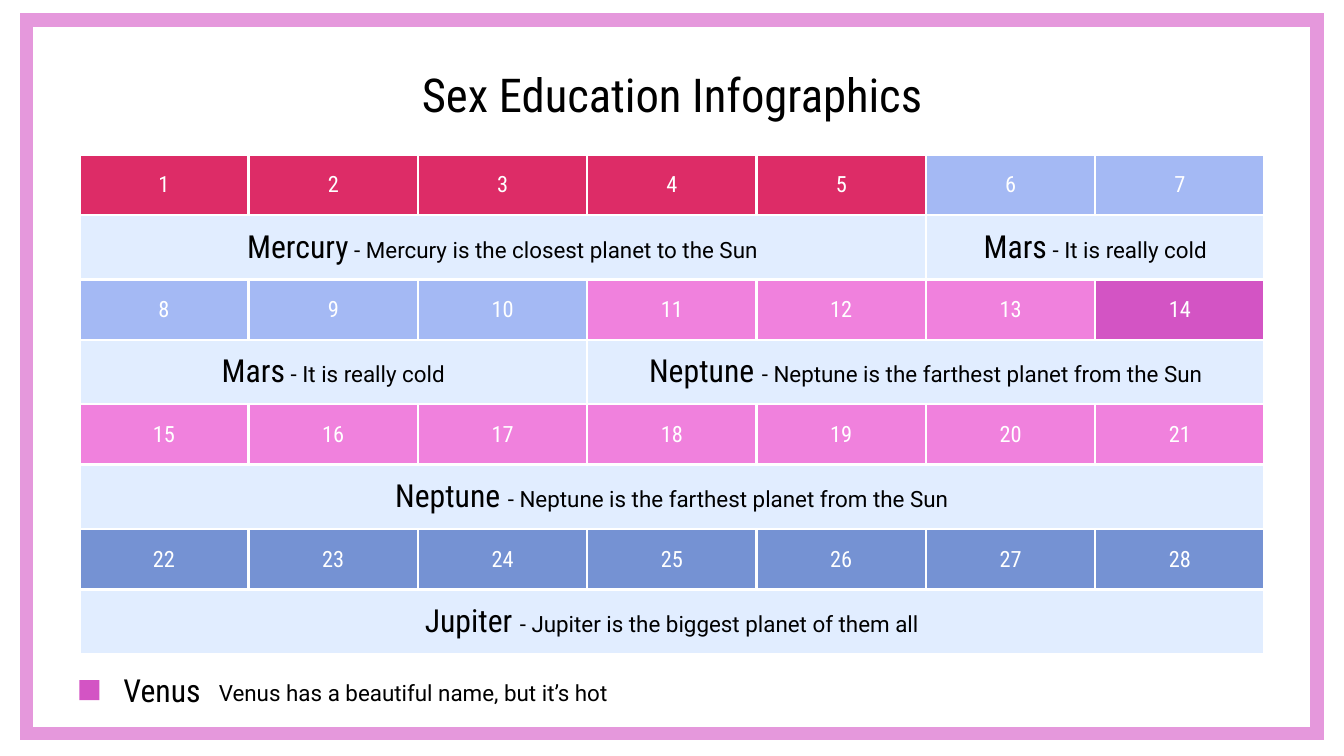
from dataclasses import dataclass

from lxml.etree import SubElement
from pptx import Presentation
from pptx.dml.color import RGBColor
from pptx.enum.shapes import MSO_SHAPE as Shape
from pptx.enum.text import MSO_ANCHOR as Anchor, PP_ALIGN as Align
from pptx.oxml.ns import qn
from pptx.shapes.autoshape import Shape as AutoShape
from pptx.slide import Slide
from pptx.table import Table, _Cell as Cell
from pptx.text.text import _Paragraph as Paragraph
from pptx.util import Inches, Pt

HEADING, BODY = "Roboto Condensed", "Roboto"
BLACK, WHITE = "000000", "FFFFFF"
CRIMSON, PERIWINKLE, PINK = "DD2C67", "A4B9F4", "F081DD"
BLUE, ORCHID, PALE, FRAME = "7592D3", "D354C4", "E1EDFF", "E598DC"
SLIDE_WIDTH = 10
SLIDE_HEIGHT = SLIDE_WIDTH * 9 / 16
DAYS_PER_WEEK = 7
MARGIN, CONTENT_WIDTH = 0.59, 8.82
DAY_HEIGHT, PHASE_HEIGHT = 0.45, 0.46


@dataclass
class Phase:
    """A run of days in one week; the marked day takes the legend colour."""
    name: str
    description: str
    days: int
    color: str
    marked_day: int = 0


NEPTUNE = ("Neptune ", "- Neptune is the farthest planet from the Sun")
MARS = ("Mars", " - It is really cold")
WEEKS = [
    [Phase("Mercury", " - Mercury is the closest planet to the Sun", 5, CRIMSON),
     Phase(*MARS, 2, PERIWINKLE)],
    [Phase(*MARS, 3, PERIWINKLE), Phase(*NEPTUNE, 4, PINK, marked_day=14)],
    [Phase(*NEPTUNE, 7, PINK)],
    [Phase("Jupiter ", "- Jupiter is the biggest planet of them all", 7, BLUE)],
]


def rgb(color: str) -> RGBColor:
    return RGBColor.from_string(color)


def add_run(paragraph: Paragraph, text: str, size: float, font: str,
            color: str = BLACK) -> None:
    run = paragraph.add_run()
    run.text = text
    run.font.size, run.font.name = Pt(size), font
    run.font.color.rgb = rgb(color)


def add_rectangle(slide: Slide, left: float, top: float, width: float,
                  height: float) -> AutoShape:
    rectangle = slide.shapes.add_shape(
        Shape.RECTANGLE, Inches(left), Inches(top), Inches(width), Inches(height))
    rectangle.shadow.inherit = False
    return rectangle


def add_frame(slide: Slide) -> None:
    frame = add_rectangle(slide, 0.2, 0.15, 9.6, 5.31)
    frame.fill.background()
    frame.line.color.rgb = rgb(FRAME)
    frame.line.width = Pt(7.13)
    outline = frame._element.spPr.find(qn("a:ln"))
    SubElement(outline, qn("a:miter"), lim="800000")


def add_label(slide: Slide, left: float, top: float, width: float, height: float,
              text: str, size: float, font: str) -> None:
    label = slide.shapes.add_textbox(
        Inches(left), Inches(top), Inches(width), Inches(height)).text_frame
    label.word_wrap = True
    label.vertical_anchor = Anchor.MIDDLE
    label.margin_top = label.margin_bottom = Inches(0.1)
    add_run(label.paragraphs[0], text, size, font)


def style_cell(cell: Cell, color: str) -> Paragraph:
    """Fill and border the cell, and return its centred paragraph."""
    cell.fill.solid()
    cell.fill.fore_color.rgb = rgb(color)
    cell.vertical_anchor = Anchor.MIDDLE
    cell.margin_left = cell.margin_right = Inches(0.1)
    cell.margin_top = cell.margin_bottom = Inches(0.1)
    properties = cell._tc.get_or_add_tcPr()
    for position, side in enumerate(("lnL", "lnR", "lnT", "lnB")):
        border = SubElement(properties, qn(f"a:{side}"), w=str(Pt(1.5)))
        fill = SubElement(border, qn("a:solidFill"))
        SubElement(fill, qn("a:srgbClr"), val=WHITE)
        properties.insert(position, border)
    paragraph = cell.text_frame.paragraphs[0]
    paragraph.alignment = Align.CENTER
    return paragraph


def fill_week(calendar: Table, week: int, phases: list[Phase]) -> None:
    day_row, phase_row = 2 * week, 2 * week + 1
    start = 0
    for phase in phases:
        end = start + phase.days
        for column in range(start, end):
            day = week * DAYS_PER_WEEK + column + 1
            color = ORCHID if day == phase.marked_day else phase.color
            number = style_cell(calendar.cell(day_row, column), color)
            add_run(number, str(day), 12, HEADING, WHITE)
            style_cell(calendar.cell(phase_row, column), PALE)
        first = calendar.cell(phase_row, start)
        first.merge(calendar.cell(phase_row, end - 1))
        caption = first.text_frame.paragraphs[0]
        add_run(caption, phase.name, 17, HEADING)
        add_run(caption, phase.description, 12, BODY)
        start = end


def add_calendar(slide: Slide) -> None:
    height = len(WEEKS) * (DAY_HEIGHT + PHASE_HEIGHT)
    calendar = slide.shapes.add_table(
        2 * len(WEEKS), DAYS_PER_WEEK, Inches(MARGIN), Inches(1.15),
        Inches(CONTENT_WIDTH), Inches(height)).table
    calendar.first_row = calendar.horz_banding = False
    for index, row in enumerate(calendar.rows):
        row.height = Inches(PHASE_HEIGHT if index % 2 else DAY_HEIGHT)
    for week, phases in enumerate(WEEKS):
        fill_week(calendar, week, phases)


def add_title(slide: Slide, text: str) -> None:
    title = slide.shapes.title
    title.left, title.top = Inches(MARGIN), Inches(0.39)
    title.width, title.height = Inches(CONTENT_WIDTH), Inches(0.63)
    frame = title.text_frame
    frame.vertical_anchor = Anchor.TOP
    frame.margin_top = frame.margin_bottom = Inches(0.1)
    frame.paragraphs[0].alignment = Align.CENTER
    add_run(frame.paragraphs[0], text, 25, HEADING)


def main() -> None:
    presentation = Presentation()
    presentation.slide_width = Inches(SLIDE_WIDTH)
    presentation.slide_height = Inches(SLIDE_HEIGHT)
    slide = presentation.slides.add_slide(presentation.slide_layouts[5])

    add_frame(slide)
    add_title(slide, "Sex Education Infographics")
    add_calendar(slide)

    marker = add_rectangle(slide, MARGIN, 5.06, 0.15, 0.15)
    marker.fill.solid()
    marker.fill.fore_color.rgb = rgb(ORCHID)
    marker.line.fill.background()
    add_label(slide, 0.82, 5.03, 0.88, 0.2, "Venus", 17, HEADING)
    add_label(slide, 1.53, 5.08, 3.47, 0.15,
              "Venus has a beautiful name, but it’s hot", 12, BODY)

    presentation.save("out.pptx")


if __name__ == "__main__":
    main()
